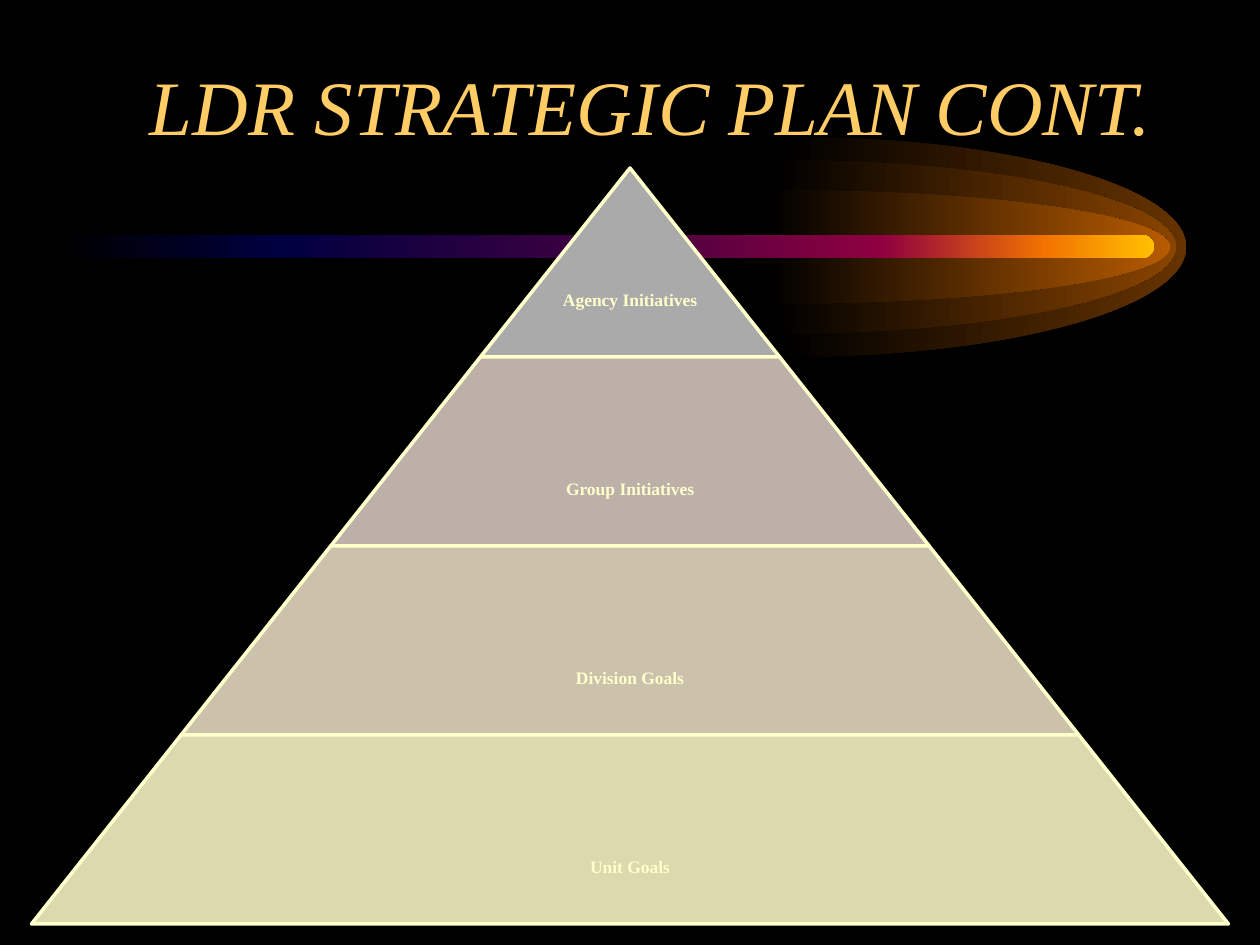
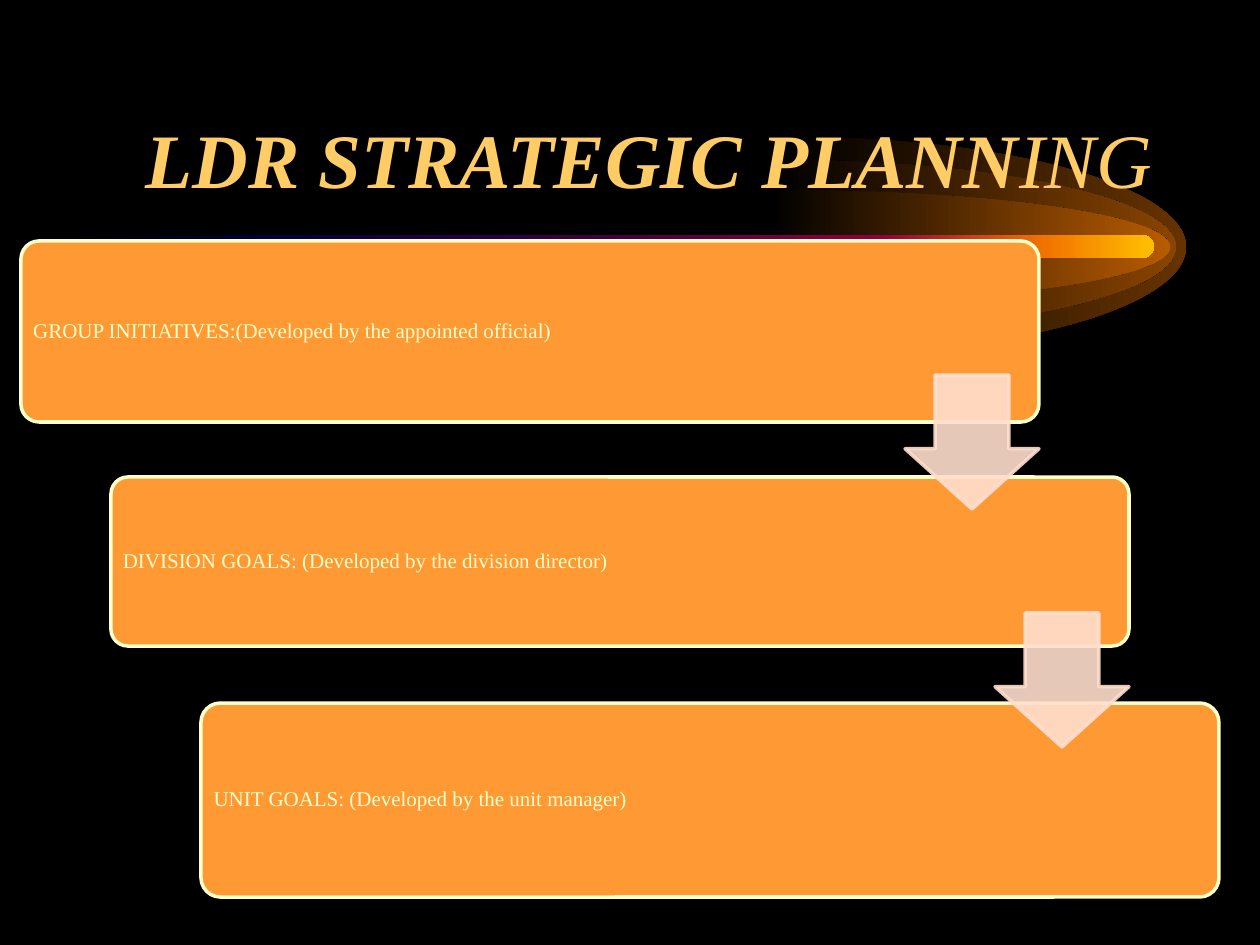
from lxml.etree import SubElement
from pptx import Presentation
from pptx.dml.color import RGBColor
from pptx.enum.shapes import MSO_SHAPE as Shape
from pptx.enum.text import MSO_ANCHOR as Anchor, PP_ALIGN as Align
from pptx.oxml.ns import qn
from pptx.util import Emu, Pt

EMU_PER_PX = 914400 / 126
SLIDE_WIDTH, SLIDE_HEIGHT = 1260, 945
COMET_Y = 247
ARC = 0.55  # handle length of a cubic curve that draws a quarter ellipse


def px(length):
    return Emu(round(length * EMU_PER_PX))


def rgb(hex_color):
    return RGBColor.from_string(hex_color)


def write_text(shape, text, size=12, color="FFFFCC", bold=False, italic=False,
               align=Align.LEFT, anchor=Anchor.MIDDLE, inset=(7, 6),
               spacing=0.9, plain_tail=""):
    """Fill the shape with one paragraph; plain_tail continues it without bold."""
    frame = shape.text_frame
    frame.word_wrap = True
    frame.vertical_anchor = anchor
    frame.margin_left = frame.margin_right = px(inset[0])
    frame.margin_top = frame.margin_bottom = px(inset[1])
    paragraph = frame.paragraphs[0]
    paragraph.alignment = align
    paragraph.line_spacing = spacing
    for words, weight in ((text, bold), (plain_tail, False)):
        if words:
            run = paragraph.add_run()
            run.text = words
            font = run.font
            font.name, font.size = "Times New Roman", Pt(size)
            font.bold, font.italic = weight, italic
            font.color.rgb = rgb(color)


def bend(segment, handles, end):
    """Turn a straight freeform segment into a cubic curve."""
    segment.tag = qn("a:cubicBezTo")
    for point in list(segment):
        segment.remove(point)
    for x, y in (*handles, end):
        SubElement(segment, qn("a:pt"), x=str(px(x)), y=str(px(y)))


class Deck:
    """Holds the shared style and the current slide."""

    background = "000000"
    title_color = "FFCC66"
    outline = "FFFFCC"
    glows = ((792, 110, "663300"), (782, 87, "894400"), (776, 57, "B75B00"))
    tail_stops = ((0, "000000"), (20, "000040"), (50, "400040"),
                  (75, "8F0040"), (90, "F27300"), (100, "FFBF00"))

    def __init__(self):
        self.presentation = Presentation()
        self.presentation.slide_width = px(SLIDE_WIDTH)
        self.presentation.slide_height = px(SLIDE_HEIGHT)
        self.slide = None

    def add_slide(self, title, title_height, **title_format):
        blank = self.presentation.slide_layouts[6]
        self.slide = self.presentation.slides.add_slide(blank)
        fill = self.slide.background.fill
        fill.solid()
        fill.fore_color.rgb = rgb(self.background)
        self.comet()
        self.text(title, 94, 52, 1071, title_height, size=44,
                  color=self.title_color, italic=True, align=Align.RIGHT,
                  anchor=Anchor.BOTTOM, inset=(13, 6), spacing=1, **title_format)

    def comet(self):
        for center_x, radius_y, color in self.glows:
            self.glow(center_x, 394, radius_y, color)
        tail = self.shape(Shape.ROUNDED_RECTANGLE, 63, COMET_Y - 12, 1091, 23,
                          adjustments=(0.5,))
        self.gradient(tail, self.tail_stops)

    def glow(self, center_x, radius_x, radius_y, color):
        """Draw the right half of an ellipse, fading to black on the left."""
        overhang = 6
        corners = ((center_x, COMET_Y - radius_y),
                   (center_x + radius_x, COMET_Y),
                   (center_x - overhang, COMET_Y + radius_y),
                   (center_x, COMET_Y))
        points = [(px(x), px(y)) for x, y in corners]
        builder = self.slide.shapes.build_freeform(*points[0])
        builder.add_line_segments(points[1:])
        half_ellipse = builder.convert_to_shape()

        right, bottom = overhang + radius_x, 2 * radius_y
        handle_x = overhang + ARC * radius_x
        handle_y = ARC * radius_y
        upper, lower = list(half_ellipse.element.spPr.iter(qn("a:lnTo")))[:2]
        bend(upper, ((handle_x, 0), (right, radius_y - handle_y)),
             (right, radius_y))
        bend(lower, ((right, radius_y + handle_y), (handle_x, bottom)),
             (0, bottom))

        half_ellipse.shadow.inherit = False
        half_ellipse.line.fill.background()
        self.gradient(half_ellipse, ((0, self.background), (100, color)))

    def gradient(self, shape, stops):
        """Fill the shape from left to right with (percent, colour) stops."""
        shape.fill.gradient()
        shape.fill.gradient_angle = 0
        stop_list = shape.element.spPr.find(qn("a:gradFill")).find(qn("a:gsLst"))
        for stop in list(stop_list):
            stop_list.remove(stop)
        for percent, color in stops:
            stop = SubElement(stop_list, qn("a:gs"), pos=str(percent * 1000))
            SubElement(stop, qn("a:srgbClr"), val=color)

    def shape(self, kind, left, top, width, height, fill=None, line=None,
              adjustments=(), opacity=100):
        shape = self.slide.shapes.add_shape(
            kind, px(left), px(top), px(width), px(height))
        shape.shadow.inherit = False
        for index, value in enumerate(adjustments):
            shape.adjustments[index] = value
        if fill:
            shape.fill.solid()
            shape.fill.fore_color.rgb = rgb(fill)
        if line:
            shape.line.color.rgb = rgb(line)
            shape.line.width = Pt(2)
        else:
            shape.line.fill.background()
        if opacity < 100:
            for color in shape.element.spPr.iter(qn("a:srgbClr")):
                SubElement(color, qn("a:alpha"), val=str(opacity * 1000))
        return shape

    def text(self, text, left, top, width, height, **text_format):
        box = self.slide.shapes.add_textbox(
            px(left), px(top), px(width), px(height))
        write_text(box, text, **text_format)

    def pyramid(self, levels, top, base_width, level_height):
        step = base_width / len(levels)
        inset = step / 2 / level_height
        for index, (label, color) in enumerate(levels):
            width = step * (index + 1)
            left = (SLIDE_WIDTH - width) / 2
            level_top = top + level_height * index
            self.shape(Shape.TRAPEZOID, left, level_top, width, level_height,
                       fill=color, line=self.outline, adjustments=(inset,))
            self.text(label, left, level_top + 113, width, 40, size=10,
                      bold=True, align=Align.CENTER, inset=(1, 1))

    def staircase(self, steps, arrow_tops):
        left, shift, width, arrow_size = 21, 90, 1018, 134
        for index, (label, top, height) in enumerate(steps):
            card = self.shape(Shape.ROUNDED_RECTANGLE, left + shift * index, top,
                              width, height, fill="FF9933", line=self.outline,
                              adjustments=(0.1,))
            write_text(card, label)
        for index, top in enumerate(arrow_tops):
            arrow_left = left + shift * index + width - arrow_size
            self.shape(Shape.DOWN_ARROW, arrow_left, top, arrow_size, arrow_size,
                       fill="FFDECE", line="FFDECE", adjustments=(0.55, 0.45),
                       opacity=90)


def main():
    deck = Deck()

    deck.add_slide("LDR STRATEGIC PLAN CONT.", 105)
    deck.pyramid((("Agency Initiatives", "AAAAAA"),
                  ("Group Initiatives", "BCB0A9"),
                  ("Division Goals", "CCC1AB"),
                  ("Unit Goals", "DADAAE")),
                 top=168, base_width=1197, level_height=189)

    deck.add_slide("LDR STRATEGIC PLANN", 158, bold=True, plain_tail="ING")
    deck.staircase((
        ("GROUP INITIATIVES:(Developed by the appointed official)", 241, 181),
        ("DIVISION GOALS: (Developed by the division director)", 477, 169),
        ("UNIT GOALS: (Developed by the unit manager)", 703, 194),
    ), arrow_tops=(375, 613))

    deck.presentation.save("out.pptx")


if __name__ == "__main__":
    main()
